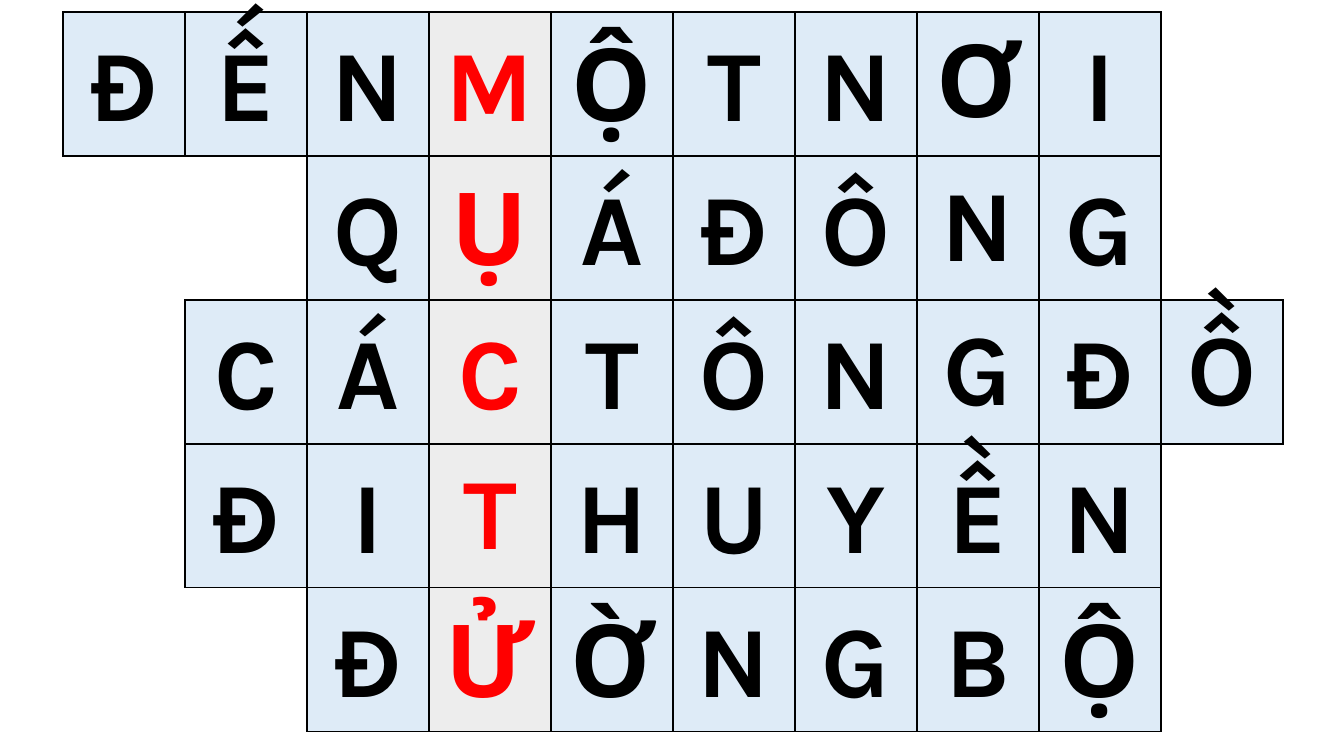
import pptx
import pptx.dml.color
import pptx.enum.text
import pptx.oxml
import pptx.oxml.ns
import pptx.util

EMU_PER_PX = 914400 / 100.8
COLORS = {
    "letter": "000000",
    "keyword": "FF0000",
    "tile": "DEEBF7",
    "keyword_tile": "EDEDED",
    "empty": "FFFFFF",
    "border": "000000",
}
# Each answer starts at a column offset
ANSWERS = [
    (0, "ĐẾNMỘTNƠI"),
    (2, "QỤÁĐÔNG"),
    (1, "CÁCTÔNGĐỒ"),
    (1, "ĐITHUYỀN"),
    (2, "ĐỬỜNGBỘ"),
]
COLUMN_COUNT = 10
KEYWORD_COLUMN = 3
# Tiles whose paragraph keeps single spacing, as (row, column)
SINGLE_SPACED = {(0, 7), (1, 7), (2, 7), (2, 9), (3, 3)}
SIDES = {"lnL": (0, -1), "lnR": (0, 1), "lnT": (-1, 0), "lnB": (1, 0)}


def px(length):
    return pptx.util.Emu(round(length * EMU_PER_PX))


def rgb(name):
    return pptx.dml.color.RGBColor.from_string(COLORS[name])


def set_borders(cell, drawn_sides):
    properties = cell._tc.get_or_add_tcPr()
    for side in SIDES:
        paint = "<a:noFill/>"
        if side in drawn_sides:
            paint = f'<a:solidFill><a:srgbClr val="{COLORS["border"]}"/></a:solidFill>'
        properties.append(pptx.oxml.parse_xml(
            f'<a:{side} {pptx.oxml.ns.nsdecls("a")} w="12700">{paint}</a:{side}>'))


def set_fill(cell, color):
    cell.fill.solid()
    cell.fill.fore_color.rgb = rgb(color)


def write_letter(cell, letter, color, single_spaced):
    cell.vertical_anchor = pptx.enum.text.MSO_ANCHOR.MIDDLE
    cell.margin_left = cell.margin_right = px(7)
    cell.margin_top = cell.margin_bottom = 0
    para = cell.text_frame.paragraphs[0]
    para.text = letter
    para.alignment = pptx.enum.text.PP_ALIGN.CENTER
    if not single_spaced:
        para.line_spacing = 1.07
        para.space_after = pptx.util.Pt(8)
    font = para.runs[0].font
    font.name = "Karla"
    font.size = pptx.util.Pt(72)
    font.bold = True
    font.color.rgb = rgb(color)


def add_crossword(page, left, top, column_width, row_height):
    letters = {(row, offset + index): letter
               for row, (offset, answer) in enumerate(ANSWERS)
               for index, letter in enumerate(answer)}
    frame = page.shapes.add_table(
        len(ANSWERS), COLUMN_COUNT, px(left), px(top),
        px(column_width * COLUMN_COUNT), px(row_height * len(ANSWERS)))
    table = frame.table
    table.first_row = table.horz_banding = False
    for column in table.columns:
        column.width = px(column_width)
    for row in table.rows:
        row.height = px(row_height)

    for row in range(len(ANSWERS)):
        for column in range(COLUMN_COUNT):
            cell = table.cell(row, column)
            place = (row, column)
            # An edge is drawn where a letter tile lies on either side
            set_borders(cell, [
                side for side, (down, right) in SIDES.items()
                if place in letters or (row + down, column + right) in letters])
            if place not in letters:
                set_fill(cell, "empty")
                continue
            in_keyword = column == KEYWORD_COLUMN
            set_fill(cell, "keyword_tile" if in_keyword else "tile")
            write_letter(cell, letters[place],
                         "keyword" if in_keyword else "letter",
                         place in SINGLE_SPACED)


def main():
    deck = pptx.Presentation()
    deck.slide_width, deck.slide_height = px(1344), px(756)
    page = deck.slides.add_slide(deck.slide_layouts[6])
    add_crossword(page, left=63, top=12, column_width=122, row_height=144)
    deck.save("out.pptx")


if __name__ == "__main__":
    main()
